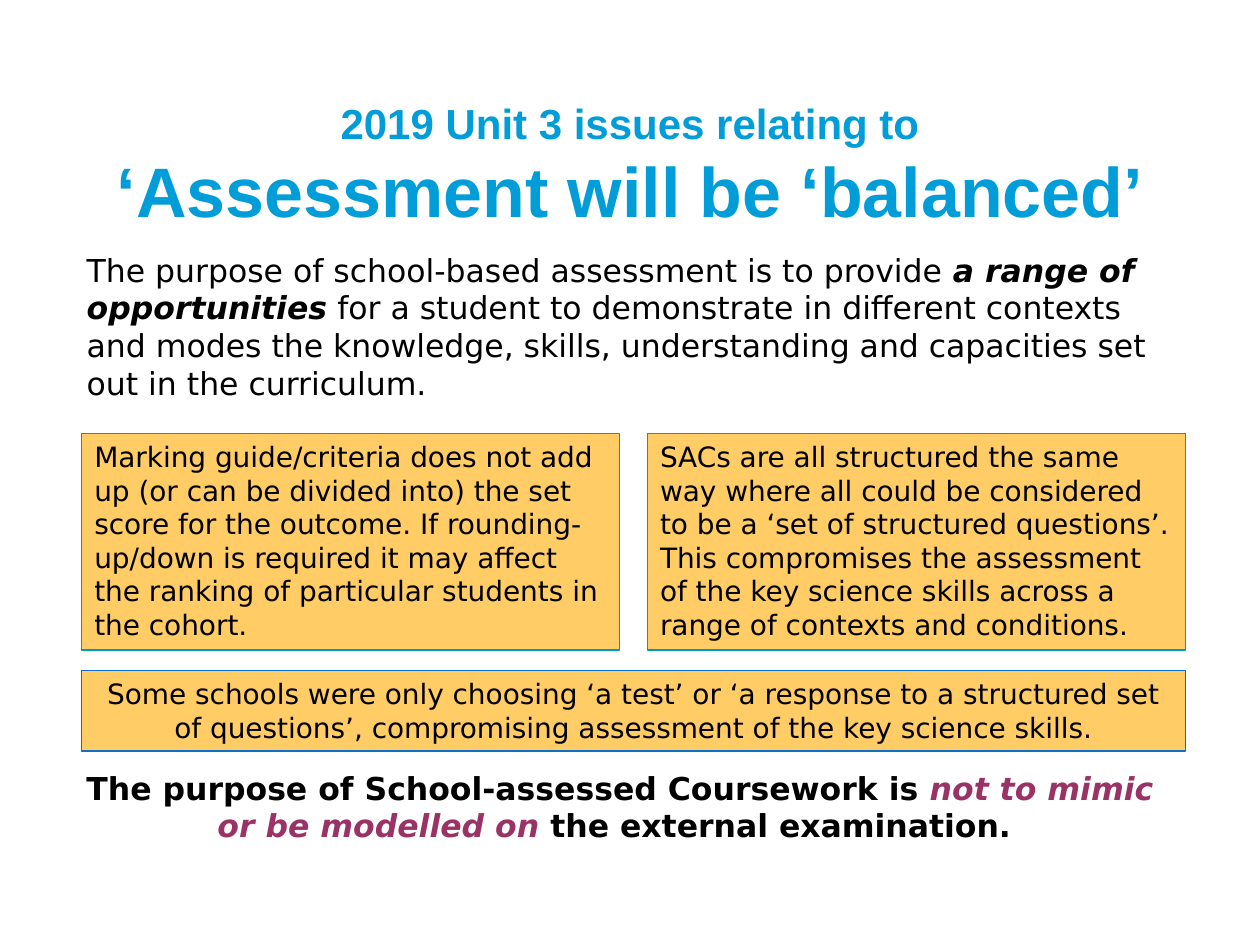
from pptx import Presentation
from pptx import util as u
from pptx.dml.color import RGBColor
from pptx.enum import shapes, text

# Grid: 100 columns by 75 rows on a 10 x 7.5 inch slide
COLS, ROWS = 100, 75
LEFT, WIDE, GAP = 6.5, 87.6, 2.2
HALF = (WIDE - GAP) / 2
BLACK, BLUE, PLUM, SAND = "000000", "009DD9", "993366", "FFCC66"
TEAL, NAVY = "0099CC", "0F6FC6"
MID, START = text.PP_ALIGN.CENTER, text.PP_ALIGN.LEFT


def paint(code):
    return RGBColor.from_string(code)


class Page:
    def __init__(self, deck):
        self.font = "DejaVu Sans"
        self.cell = deck.slide_width / COLS, deck.slide_height / ROWS
        self.slide = deck.slides.add_slide(deck.slide_layouts[6])

    def place(self, x, y, w, h):
        across, down = self.cell
        return [u.Emu(round(n * s)) for n, s in
                ((x, across), (y, down), (w, across), (h, down))]

    def fill_text(self, shape, parts, size, align, face=None):
        """Each part is (words, looks); looks may set size, bold, italic, color."""
        frame = shape.text_frame
        frame.word_wrap = True
        para = frame.paragraphs[0]
        para.alignment = align
        for words, looks in parts:
            run = para.add_run()
            run.text = words.rstrip("\n")
            font = run.font
            font.name = face or self.font
            font.size = u.Pt(looks.get("size", size))
            font.bold = looks.get("bold", False)
            font.italic = looks.get("italic", False)
            font.color.rgb = paint(looks.get("color", BLACK))
            if words.endswith("\n"):
                para.add_line_break()
        return frame

    def label(self, at, parts, size=18, align=START, face=None):
        box = self.slide.shapes.add_textbox(*self.place(*at))
        return self.fill_text(box, parts, size, align, face)

    def panel(self, at, words, edge=TEAL, align=START):
        box = self.slide.shapes.add_shape(
            shapes.MSO_SHAPE.RECTANGLE, *self.place(*at))
        box.shadow.inherit = False
        box.fill.solid()
        box.fill.fore_color.rgb = paint(SAND)
        box.line.color.rgb = paint(edge)
        box.line.width = u.Pt(0.75)
        frame = self.fill_text(box, [(words, {})], 16, align)
        frame.vertical_anchor = text.MSO_ANCHOR.TOP


def main():
    deck = Presentation()
    deck.slide_width, deck.slide_height = u.Inches(10), u.Inches(7.5)
    page = Page(deck)

    # Title
    head = {"bold": True, "color": BLUE}
    title = page.label((5.1, 6.8, 89.8, 12.5), [
        ("2019 Unit 3 issues relating to\n", {**head, "size": 24}),
        ("‘Assessment will be ‘balanced’", head)], 40, MID, "Arial")
    title.vertical_anchor = text.MSO_ANCHOR.MIDDLE

    # Purpose statement
    page.label((5.9, 19.4, 89, 13.1), [
        ("The purpose of school-based assessment is to provide ", {}),
        ("a range of opportunities", {"bold": True, "italic": True}),
        (" for a student to demonstrate in different contexts and modes the "
         "knowledge, skills, understanding and capacities set out in the "
         "curriculum.", {})])

    # Two issues side by side
    issues = (
        "Marking guide/criteria does not add up (or can be divided into) the "
        "set score for the outcome. If rounding-up/down is required it may "
        "affect the ranking of particular students in the cohort.",
        "SACs are all structured the same way where all could be considered "
        "to be a ‘set of structured questions’. This compromises the "
        "assessment of the key science skills across a range of contexts and "
        "conditions.")
    for i, words in enumerate(issues):
        page.panel((LEFT + i * (HALF + GAP), 34.4, HALF, 17.2), words)

    # Issue across the full width
    page.panel((LEFT, 53.2, WIDE, 6.4),
               "Some schools were only choosing ‘a test’ or ‘a response to a "
               "structured set of questions’, compromising assessment of the "
               "key science skills.", NAVY, MID)

    # Closing message
    page.label((4.7, 60.5, 89, 10.1), [
        ("The purpose of School-assessed Coursework is ", {"bold": True}),
        ("not to mimic or be modelled on ",
         {"bold": True, "italic": True, "color": PLUM}),
        ("the external examination. ", {"bold": True})], align=MID)

    deck.save("out.pptx")


if __name__ == "__main__":
    main()
